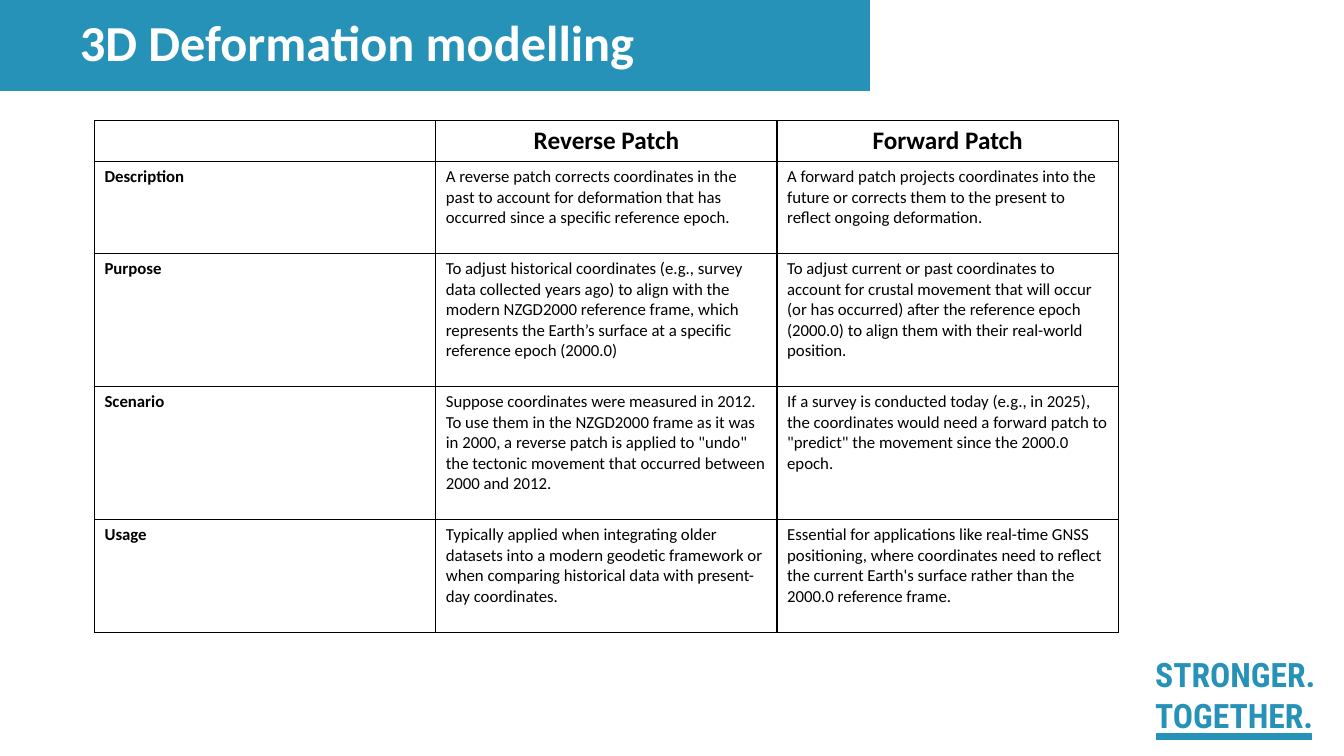
from lxml import etree
from pptx import Presentation
from pptx.dml.color import RGBColor
from pptx.enum.shapes import MSO_SHAPE
from pptx.enum.text import MSO_ANCHOR, MSO_AUTO_SIZE, PP_ALIGN
from pptx.oxml.ns import qn
from pptx.util import Pt

TITLE_ONLY = 5
RECTANGLE = MSO_SHAPE.RECTANGLE
TOP, MIDDLE = MSO_ANCHOR.TOP, MSO_ANCHOR.MIDDLE
LEFT, CENTER = PP_ALIGN.LEFT, PP_ALIGN.CENTER
NO_AUTOFIT = MSO_AUTO_SIZE.NONE

COLORS = {"blue": "2792B8", "white": "FFFFFF", "black": "000000"}

TITLE_FONT = {"name": "Calibri", "size": Pt(36), "bold": True}
HEADING_FONT = {"name": "Calibri", "size": Pt(18), "bold": True}
LABEL_FONT = {"name": "Calibri", "size": Pt(12), "bold": True}
BODY_FONT = {"name": "Calibri", "size": Pt(12), "bold": False}
SLOGAN_FONT = {"name": "Roboto Condensed", "size": Pt(24), "bold": True}

COLUMN_WIDTH = 243.8
ROW_HEIGHTS = [29.3, 65.7, 95, 95, 80.4]
PATCH_ROWS = [
    ["", "Reverse Patch", "Forward Patch"],
    ["Description",
     "A reverse patch corrects coordinates in the past to account for "
     "deformation that has occurred since a specific reference epoch.",
     "A forward patch projects coordinates into the future or corrects them "
     "to the present to reflect ongoing deformation."],
    ["Purpose",
     "To adjust historical coordinates (e.g., survey data collected years "
     "ago) to align with the modern NZGD2000 reference frame, which "
     "represents the Earth’s surface at a specific reference epoch (2000.0)",
     "To adjust current or past coordinates to account for crustal movement "
     "that will occur (or has occurred) after the reference epoch (2000.0) "
     "to align them with their real-world position."],
    ["Scenario",
     "Suppose coordinates were measured in 2012. To use them in the NZGD2000 "
     "frame as it was in 2000, a reverse patch is applied to \"undo\" the "
     "tectonic movement that occurred between 2000 and 2012.",
     "If a survey is conducted today (e.g., in 2025), the coordinates would "
     "need a forward patch to \"predict\" the movement since the 2000.0 "
     "epoch."],
    ["Usage",
     "Typically applied when integrating older datasets into a modern "
     "geodetic framework or when comparing historical data with present-day "
     "coordinates.",
     "Essential for applications like real-time GNSS positioning, where "
     "coordinates need to reflect the current Earth's surface rather than "
     "the 2000.0 reference frame."],
]


def rgb(color):
    return RGBColor.from_string(COLORS[color])


def set_attributes(target, values):
    for attribute, value in values.items():
        setattr(target, attribute, value)


def write_text(frame, text, font, color, align=LEFT):
    frame.text = text
    for paragraph in frame.paragraphs:
        paragraph.alignment = align
        set_attributes(paragraph.font, font)
        paragraph.font.color.rgb = rgb(color)


def fill_title(title):
    set_attributes(title, {"left": 0, "top": 0,
                           "width": Pt(621.4), "height": Pt(65)})
    title.fill.solid()
    title.fill.fore_color.rgb = rgb("blue")
    frame = title.text_frame
    write_text(frame, "3D Deformation modelling", TITLE_FONT, "white")
    set_attributes(frame, {
        "margin_left": Pt(57), "margin_right": Pt(7.2),
        "margin_top": Pt(3.6), "margin_bottom": Pt(3.6),
        "vertical_anchor": MIDDLE, "word_wrap": True, "auto_size": NO_AUTOFIT})
    frame.paragraphs[0].line_spacing = 0.9


def add_block(slide, left, top, width, height, color):
    block = slide.shapes.add_shape(
        RECTANGLE, Pt(left), Pt(top), Pt(width), Pt(height))
    block.shadow.inherit = False
    block.fill.solid()
    block.fill.fore_color.rgb = rgb(color)
    block.line.color.rgb = rgb(color)
    block.line.width = Pt(1)
    return block


def add_slogan(slide):
    slogan = add_block(slide, 818, 463.7, 134, 76, "white")
    write_text(slogan.text_frame, "STRONGER.\nTOGETHER.", SLOGAN_FONT, "blue")
    set_attributes(slogan.text_frame,
                   {"vertical_anchor": TOP, "word_wrap": True})
    add_block(slide, 826, 524.4, 111, 4, "blue")


def add_borders(cell):
    properties = cell._tc.get_or_add_tcPr()
    for side in ("a:lnL", "a:lnR", "a:lnT", "a:lnB"):
        line = etree.SubElement(properties, qn(side), w=str(Pt(1)))
        fill = etree.SubElement(line, qn("a:solidFill"))
        etree.SubElement(fill, qn("a:srgbClr"), val=COLORS["black"])


def cell_font(row, column):
    if row == 0:
        return HEADING_FONT
    return LABEL_FONT if column == 0 else BODY_FONT


def add_patch_table(slide):
    column_count = len(PATCH_ROWS[0])
    table = slide.shapes.add_table(
        len(PATCH_ROWS), column_count, Pt(67.5), Pt(86.2),
        Pt(COLUMN_WIDTH * column_count), Pt(sum(ROW_HEIGHTS))).table
    set_attributes(table, {"first_row": False, "horz_banding": False})
    for column in table.columns:
        column.width = Pt(COLUMN_WIDTH)
    for row, height in zip(table.rows, ROW_HEIGHTS):
        row.height = Pt(height)
    for row, texts in enumerate(PATCH_ROWS):
        for column, text in enumerate(texts):
            cell = table.cell(row, column)
            add_borders(cell)
            cell.fill.background()
            write_text(cell.text_frame, text, cell_font(row, column), "black",
                       CENTER if row == 0 else LEFT)


def main():
    presentation = Presentation()
    presentation.slide_width = Pt(960)
    presentation.slide_height = Pt(540)
    slide = presentation.slides.add_slide(
        presentation.slide_layouts[TITLE_ONLY])

    # Corner slogan with its underline
    add_slogan(slide)
    # Title band
    fill_title(slide.shapes.title)
    # Comparison of the two patches
    add_patch_table(slide)

    presentation.save("out.pptx")


if __name__ == "__main__":
    main()
